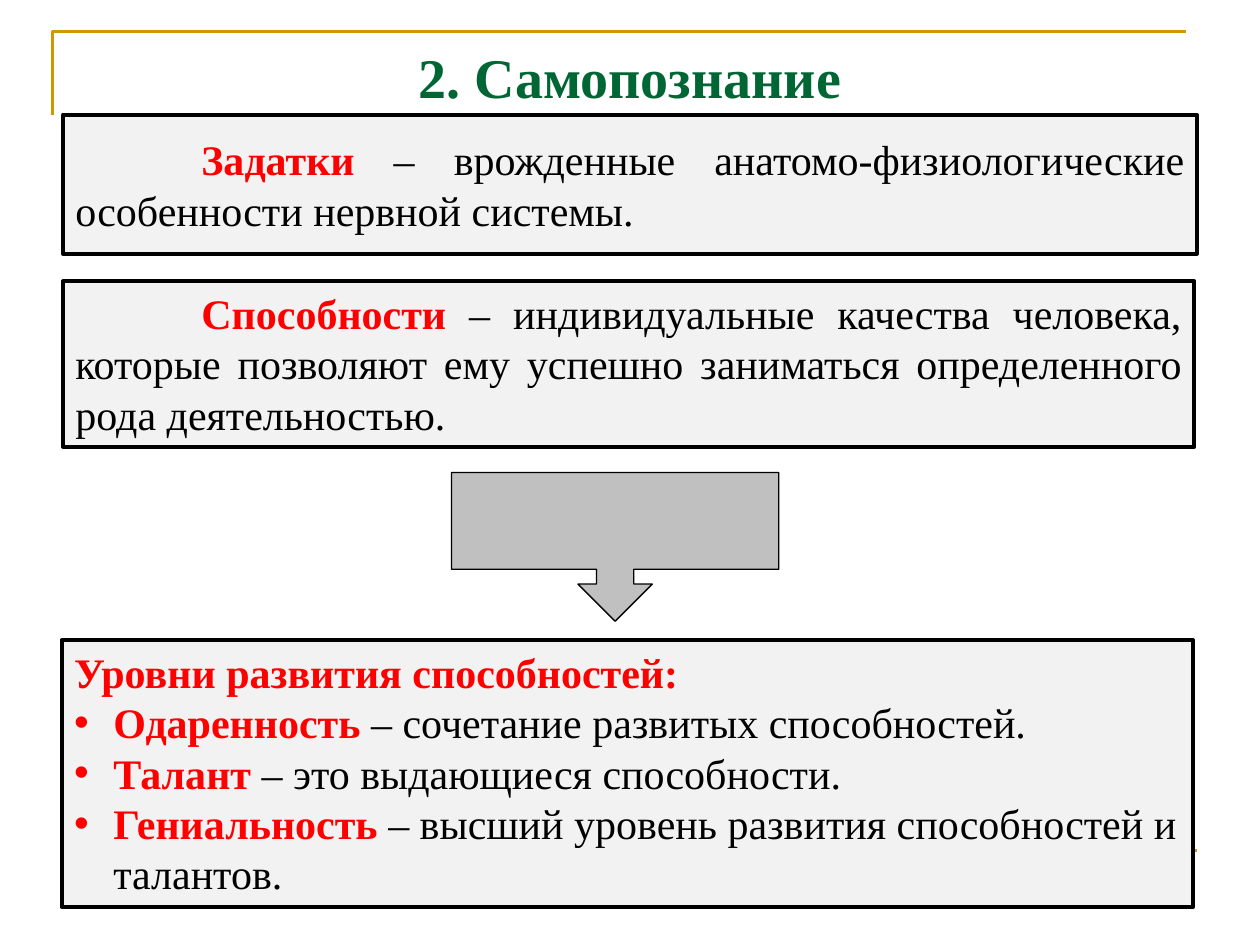
from lxml.etree import SubElement
from pptx import Presentation
from pptx.dml.color import RGBColor
from pptx.enum.shapes import MSO_CONNECTOR, MSO_SHAPE
from pptx.enum.text import MSO_ANCHOR, PP_ALIGN
from pptx.oxml.ns import qn
from pptx.util import Pt

THEME = {
    "font": "Times New Roman",
    "bullet_font": "Arial",
    "title_size": 32,
    "body_size": 24,
    "title": "006633",
    "term": "FF0000",
    "text": "000000",
    "panel": "F2F2F2",
    "arrow": "C0C0C0",
    "outline": "000000",
    "frame": "CC9900",
}

TITLE = "2. Самопознание"
FIRST_LINE, BULLET = (0, 72), (22.5, -22.5)  # left margin, indent

# Each paragraph: term, explanation, (left margin, indent), bulleted
PANELS = [
    {
        "box": (36, 65.5, 648, 79.5),
        "align": PP_ALIGN.JUSTIFY,
        "anchor": MSO_ANCHOR.MIDDLE,
        "paragraphs": [
            ("Задатки", " – врожденные анатомо-физиологические "
             "особенности нервной системы.", FIRST_LINE, False),
        ],
    },
    {
        "box": (36, 160.8, 646.5, 94.5),
        "align": PP_ALIGN.JUSTIFY,
        "anchor": MSO_ANCHOR.TOP,
        "paragraphs": [
            ("Способности", " – индивидуальные качества человека, которые "
             "позволяют ему успешно заниматься определенного рода "
             "деятельностью.", FIRST_LINE, False),
        ],
    },
    {
        "box": (35.2, 365.8, 646.5, 152.6),
        "align": PP_ALIGN.LEFT,
        "anchor": MSO_ANCHOR.TOP,
        "paragraphs": [
            ("Уровни развития способностей:", "", (0, 0), False),
            ("Одаренность", " – сочетание развитых способностей.", BULLET, True),
            ("Талант", " – это выдающиеся способности.", BULLET, True),
            ("Гениальность", " – высший уровень развития способностей и "
             "талантов.", BULLET, True),
        ],
    },
]


def color(name):
    return RGBColor.from_string(THEME[name])


def points(values):
    return [Pt(value) for value in values]


def add_run(paragraph, text, size, color_name, bold):
    run = paragraph.add_run()
    run.text = text
    run.font.name = THEME["font"]
    run.font.size = Pt(THEME[size])
    run.font.bold = bold
    run.font.color.rgb = color(color_name)


def set_indent(paragraph, indent, bulleted):
    properties = paragraph._p.get_or_add_pPr()
    for name, value in zip(("marL", "indent"), indent):
        properties.set(name, str(int(Pt(value))))
    if bulleted:
        SubElement(properties, qn("a:buFont"), typeface=THEME["bullet_font"])
        SubElement(properties, qn("a:buChar"), char="•")
    else:
        SubElement(properties, qn("a:buNone"))


def add_filled_shape(slide, kind, box, fill, line_width):
    shape = slide.shapes.add_shape(kind, *points(box))
    shape.shadow.inherit = False
    shape.fill.solid()
    shape.fill.fore_color.rgb = color(fill)
    shape.line.color.rgb = color("outline")
    shape.line.width = Pt(line_width)
    return shape


def add_frame(slide):
    """Draw the corner line at the top left and the rule at the bottom."""
    builder = slide.shapes.build_freeform(Pt(30), Pt(66))
    builder.add_line_segments([points((30, 18)), points((678, 18))], close=False)
    corner = builder.convert_to_shape()
    corner.shadow.inherit = False
    corner.fill.background()
    rule = slide.shapes.add_connector(
        MSO_CONNECTOR.STRAIGHT, *points((36, 486, 684, 486)))
    SubElement(rule._element.spPr, qn("a:effectLst"))
    for shape in (corner, rule):
        shape.line.color.rgb = color("frame")
        shape.line.width = Pt(1.5)


def add_title(slide):
    title = slide.shapes.add_textbox(*points((36, 21.6, 648, 44)))
    text_frame = title.text_frame
    text_frame.word_wrap = True
    text_frame.vertical_anchor = MSO_ANCHOR.MIDDLE
    paragraph = text_frame.paragraphs[0]
    paragraph.alignment = PP_ALIGN.CENTER
    add_run(paragraph, TITLE, "title_size", "title", True)


def add_panel(slide, panel):
    shape = add_filled_shape(slide, MSO_SHAPE.RECTANGLE, panel["box"], "panel", 2.25)
    text_frame = shape.text_frame
    text_frame.word_wrap = True
    text_frame.vertical_anchor = panel["anchor"]
    for index, (term, explanation, indent, bulleted) in enumerate(panel["paragraphs"]):
        paragraph = text_frame.add_paragraph() if index else text_frame.paragraphs[0]
        paragraph.alignment = panel["align"]
        set_indent(paragraph, indent, bulleted)
        add_run(paragraph, term, "body_size", "term", True)
        if explanation:
            add_run(paragraph, explanation, "body_size", "text", False)


def main():
    presentation = Presentation()
    presentation.slide_width, presentation.slide_height = Pt(720), Pt(540)
    slide = presentation.slides.add_slide(presentation.slide_layouts[6])
    add_frame(slide)
    add_title(slide)
    for panel in PANELS:
        add_panel(slide, panel)
    arrow = add_filled_shape(
        slide, MSO_SHAPE.DOWN_ARROW_CALLOUT, (258, 270, 187, 85), "arrow", 0.75)
    for index, value in enumerate((0.25, 0.25, 0.25, 0.65)):
        arrow.adjustments[index] = value
    presentation.save("out.pptx")


if __name__ == "__main__":
    main()
